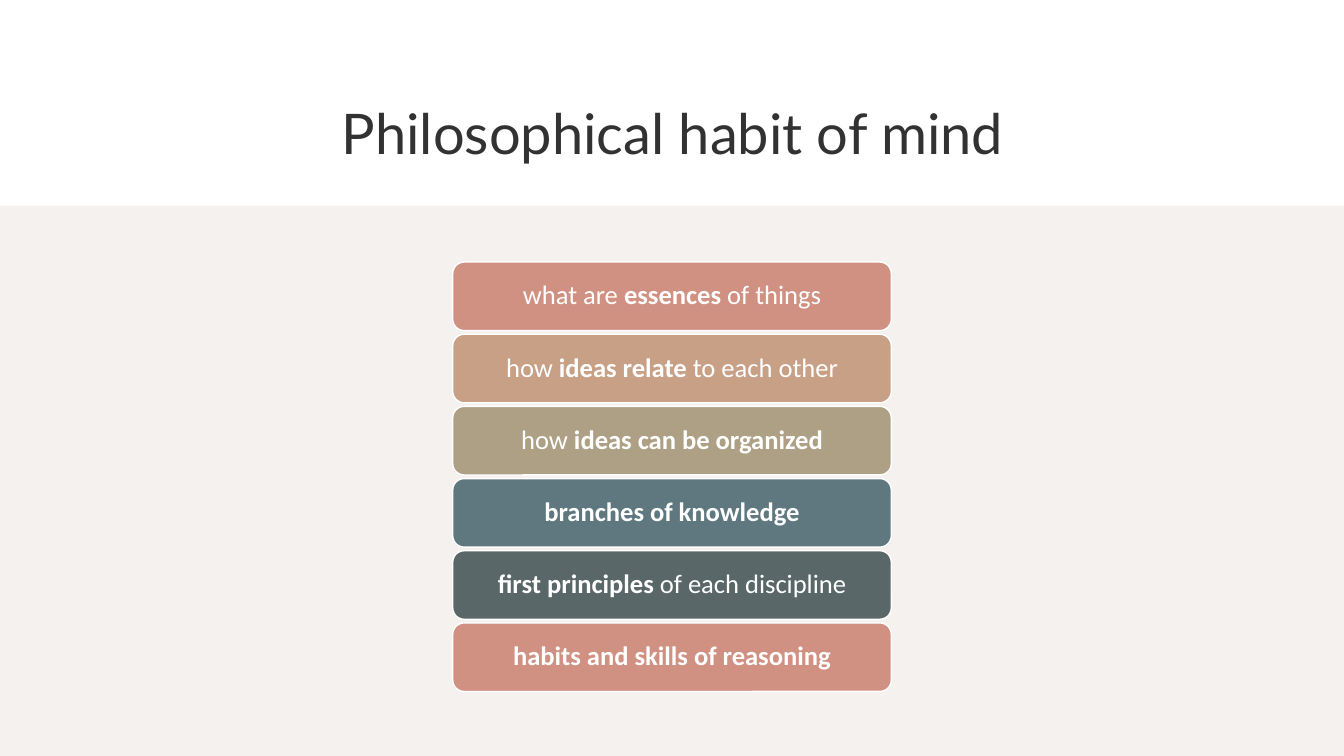
from pptx import Presentation
from pptx.dml.color import RGBColor
from pptx.enum.shapes import MSO_SHAPE
from pptx.enum.text import MSO_ANCHOR, MSO_AUTO_SIZE, PP_ALIGN
from pptx.util import Inches, Pt

RECTANGLE = MSO_SHAPE.RECTANGLE
ROUNDED = MSO_SHAPE.ROUNDED_RECTANGLE
MIDDLE = MSO_ANCHOR.MIDDLE
CENTER = PP_ALIGN.CENTER
NO_AUTOFIT = MSO_AUTO_SIZE.NONE

WHITE = RGBColor(0xFF, 0xFF, 0xFF)
INK = RGBColor(0x32, 0x32, 0x32)
LINEN = RGBColor(0xF4, 0xF1, 0xEF)
ROSE = RGBColor(0xD0, 0x91, 0x82)
TAN = RGBColor(0xC7, 0xA0, 0x85)
OLIVE = RGBColor(0xAD, 0xA0, 0x85)
TEAL = RGBColor(0x5F, 0x78, 0x7F)
SLATE = RGBColor(0x5A, 0x67, 0x68)

SLIDE_WIDTH, SLIDE_HEIGHT = 13.33, 7.5
PANEL_TOP = 2.04
BAR_SHARE = 0.95

HABITS = [
    (ROSE, [("what are ", False), ("essences", True), (" of things", False)]),
    (TAN, [("how ", False), ("ideas relate ", True), ("to each other", False)]),
    (OLIVE, [("how ", False), ("ideas can be organized", True)]),
    (TEAL, [("branches of knowledge", True)]),
    (SLATE, [("first principles ", True), ("of each discipline", False)]),
    (ROSE, [("habits and skills of reasoning", True)]),
]


def add_title(slide, text, left, top, width, height):
    """Place the centred slide title in the given box."""
    title = slide.shapes.title
    title.left, title.top = Inches(left), Inches(top)
    title.width, title.height = Inches(width), Inches(height)
    frame = title.text_frame
    frame.text = text
    frame.word_wrap = True
    frame.auto_size = NO_AUTOFIT
    frame.vertical_anchor = MIDDLE
    paragraph = frame.paragraphs[0]
    paragraph.alignment = CENTER
    paragraph.font.name = "Lato"
    paragraph.font.size = Pt(40)
    paragraph.font.color.rgb = INK


def add_block(slide, kind, fill, left, top, width, height):
    """Add a flat filled shape without shadow or outline."""
    shape = slide.shapes.add_shape(
        kind, Inches(left), Inches(top), Inches(width), Inches(height))
    shape.shadow.inherit = False
    shape.fill.solid()
    shape.fill.fore_color.rgb = fill
    shape.line.fill.background()
    return shape


def add_bar(slide, fill, phrases, left, top, width, height):
    """Add one rounded bar with plain and bold phrases."""
    bar = add_block(slide, ROUNDED, fill, left, top, width, height)
    bar.line.color.rgb = WHITE
    bar.line.width = Pt(1)
    frame = bar.text_frame
    frame.word_wrap = True
    frame.vertical_anchor = MIDDLE
    paragraph = frame.paragraphs[0]
    paragraph.alignment = CENTER
    paragraph.line_spacing = 0.9
    paragraph.font.name = "Calibri"
    paragraph.font.size = Pt(19)
    paragraph.font.color.rgb = WHITE
    for text, bold in phrases:
        run = paragraph.add_run()
        run.text = text
        run.font.bold = bold


def add_bar_stack(slide, habits, left, top, width, height):
    """Stack the bars evenly from the top to the bottom of the box."""
    pitch = height / (len(habits) - 1 + BAR_SHARE)
    for row, (fill, phrases) in enumerate(habits):
        add_bar(slide, fill, phrases, left, top + row * pitch,
                width, pitch * BAR_SHARE)


def main():
    """Build and save the presentation."""
    presentation = Presentation()
    presentation.slide_width = Inches(SLIDE_WIDTH)
    presentation.slide_height = Inches(SLIDE_HEIGHT)
    slide = presentation.slides.add_slide(presentation.slide_layouts[5])
    add_title(slide, "Philosophical habit of mind", 1.56, 0.77, 10.22, 1.09)
    add_block(slide, RECTANGLE, LINEN, 0, PANEL_TOP,
              SLIDE_WIDTH, SLIDE_HEIGHT - PANEL_TOP)
    add_bar_stack(slide, HABITS, 4.49, 2.6, 4.35, 4.26)
    presentation.save("out.pptx")


if __name__ == "__main__":
    main()
